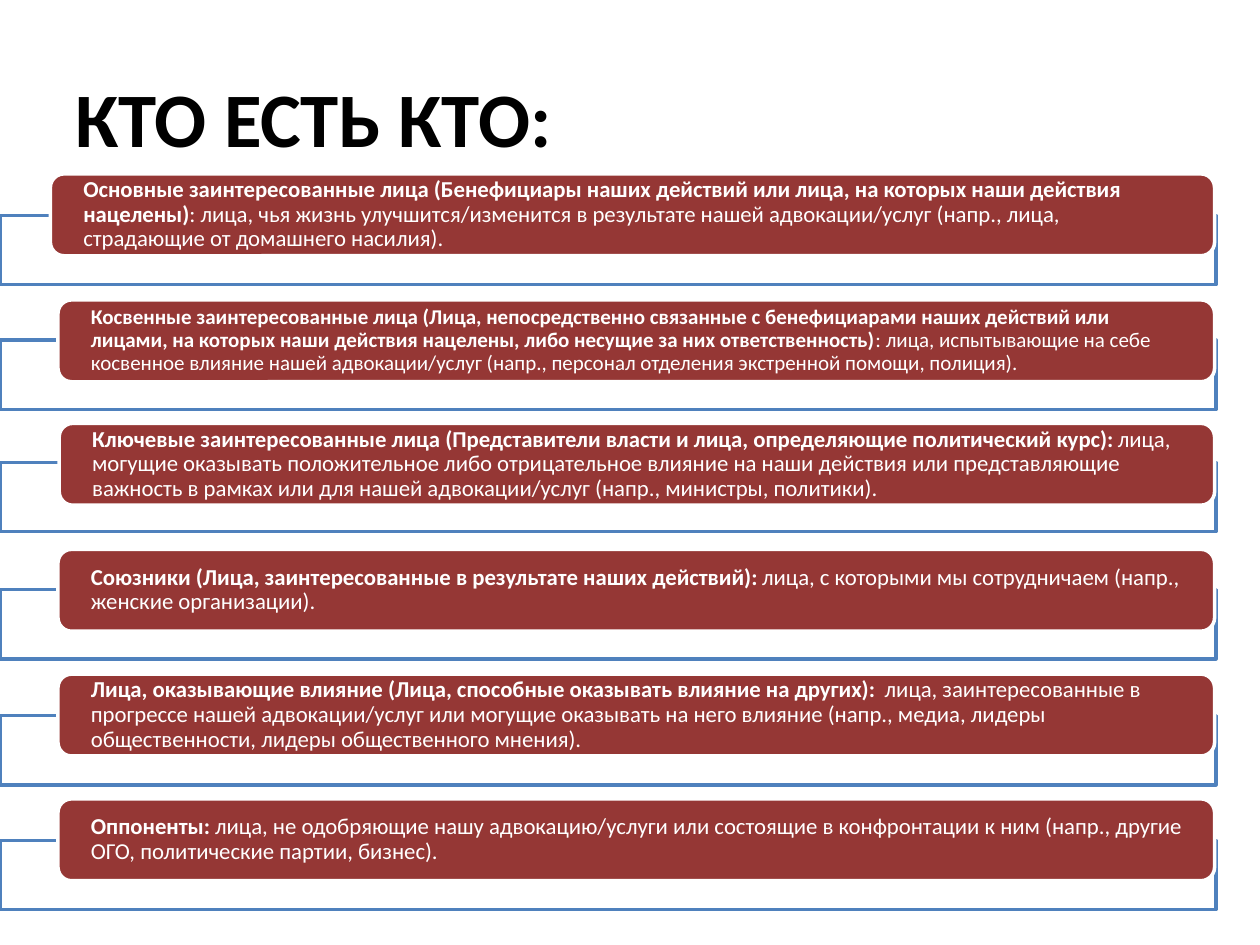
"""Build the slide that defines six groups of stakeholders."""
import pptx
import pptx.dml.color
import pptx.enum.shapes
import pptx.enum.text
import pptx.util
from pptx.util import Inches

FONT = "Calibri"
RIGHT_EDGE = 9.64
BAR_HEIGHT = 0.65
GROUPS = [
    (0.40, 1.38, 1.71, 13,
     "Основные заинтересованные лица (Бенефициары наших действий или лица, "
     "на которых наши действия нацелены)",
     ": лица, чья жизнь улучшится/изменится в результате нашей адвокации/услуг "
     "(напр., лица, страдающие от домашнего насилия)."),
    (0.46, 2.38, 2.70, 12,
     "Косвенные заинтересованные лица (Лица, непосредственно связанные с "
     "бенефициарами наших действий или лицами, на которых наши действия "
     "нацелены, либо несущие за них ответственность)",
     ": лица, испытывающие на себе косвенное влияние нашей адвокации/услуг "
     "(напр., персонал отделения экстренной помощи, полиция)."),
    (0.47, 3.36, 3.67, 13,
     "Ключевые заинтересованные лица (Представители власти и лица, "
     "определяющие политический курс): ",
     "лица, могущие оказывать положительное либо отрицательное влияние на наши "
     "действия или представляющие важность в рамках или для нашей "
     "адвокации/услуг (напр., министры, политики)."),
    (0.46, 4.36, 4.68, 13,
     "Союзники (Лица, заинтересованные в результате наших действий): ",
     "лица, с которыми мы сотрудничаем (напр., женские организации)."),
    (0.46, 5.35, 5.68, 13,
     "Лица, оказывающие влияние (Лица, способные оказывать влияние на других):  ",
     "лица, заинтересованные в прогрессе нашей адвокации/услуг или могущие "
     "оказывать на него влияние (напр., медиа, лидеры общественности, лидеры "
     "общественного мнения)."),
    (0.46, 6.34, 6.67, 13,
     "Оппоненты: ",
     "лица, не одобряющие нашу адвокацию/услуги или состоящие в конфронтации "
     "к ним (напр., другие ОГО, политические партии, бизнес)."),
]


def color(value):
    return pptx.dml.color.RGBColor.from_string(value)


def add_box(kind, left, top, width, height, fill, line):
    shape = slide.shapes.add_shape(
        kind, Inches(left), Inches(top), Inches(width), Inches(height))
    shape.shadow.inherit = False
    shape.fill.solid()
    shape.fill.fore_color.rgb = color(fill)
    shape.line.color.rgb = color(line)
    shape.line.width = pptx.util.Pt(2)
    return shape


presentation = pptx.Presentation()
presentation.slide_width = Inches(10)
presentation.slide_height = Inches(7.5)
slide = presentation.slides.add_slide(presentation.slide_layouts[5])

title = slide.shapes.title
title.left, title.top = Inches(0.5), Inches(0.3)
title.width, title.height = Inches(9), Inches(1.25)
title.text_frame.text = "КТО ЕСТЬ КТО:"
title.text_frame.vertical_anchor = pptx.enum.text.MSO_ANCHOR.MIDDLE
paragraph = title.text_frame.paragraphs[0]
paragraph.alignment = pptx.enum.text.PP_ALIGN.LEFT
paragraph.font.name = FONT
paragraph.font.size = pptx.util.Pt(44)
paragraph.font.bold = True
paragraph.font.color.rgb = color("000000")

for left, bar_top, panel_top, size, term, definition in GROUPS:
    add_box(pptx.enum.shapes.MSO_SHAPE.RECTANGLE,
            0, panel_top, 9.65, 0.55, "FFFFFF", "4F81BD")
    bar = add_box(pptx.enum.shapes.MSO_SHAPE.ROUNDED_RECTANGLE,
                  left, bar_top, RIGHT_EDGE - left, BAR_HEIGHT, "953735", "FFFFFF")
    frame = bar.text_frame
    frame.word_wrap = True
    frame.vertical_anchor = pptx.enum.text.MSO_ANCHOR.MIDDLE
    frame.margin_left = frame.margin_right = Inches(0.23)
    frame.margin_top = frame.margin_bottom = 0
    paragraph = frame.paragraphs[0]
    paragraph.alignment = pptx.enum.text.PP_ALIGN.LEFT
    paragraph.line_spacing = 0.9
    paragraph.font.name = FONT
    paragraph.font.size = pptx.util.Pt(size)
    paragraph.font.color.rgb = color("FFFFFF")
    for text, bold in ((term, True), (definition, False)):
        run = paragraph.add_run()
        run.text = text
        run.font.bold = bold

presentation.save("out.pptx")
